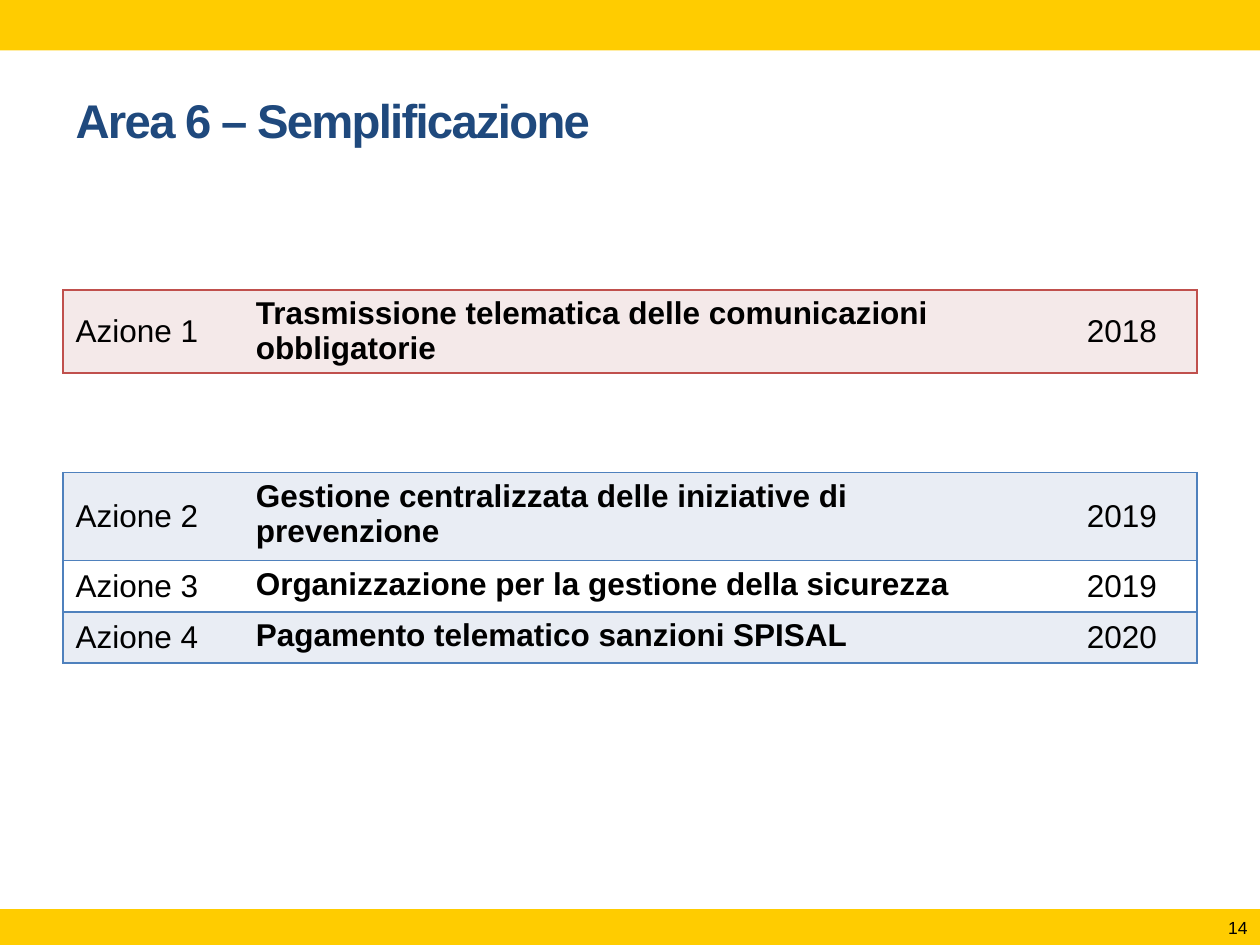
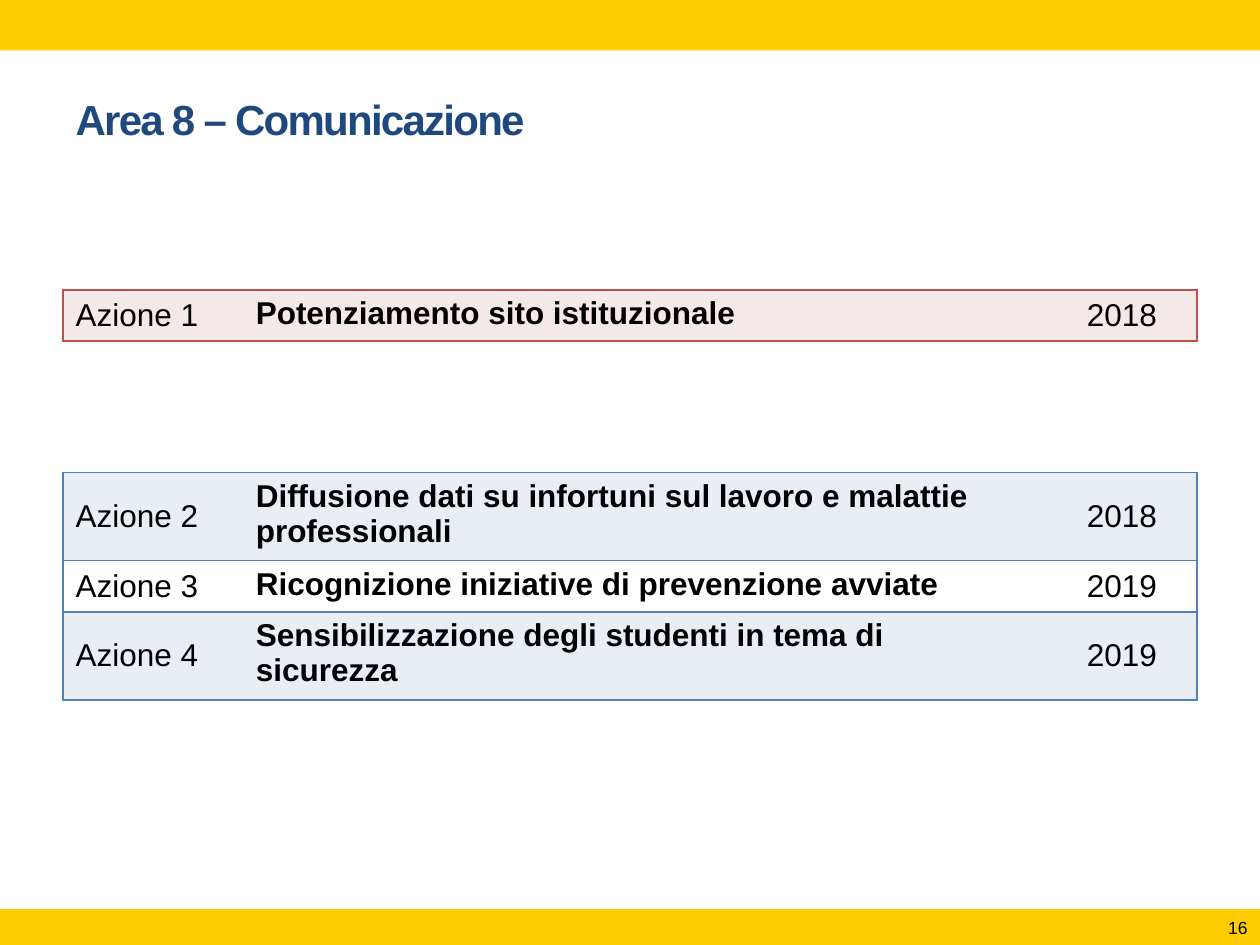
from dataclasses import dataclass

from lxml.etree import SubElement
from pptx import Presentation
from pptx.dml.color import RGBColor
from pptx.enum.shapes import MSO_SHAPE
from pptx.enum.text import MSO_ANCHOR, MSO_AUTO_SIZE, PP_ALIGN
from pptx.oxml.ns import qn
from pptx.util import Pt


@dataclass(frozen=True)
class Theme:
    font: str = "Arial"
    band: str = "FFCC00"
    title: str = "1F497D"
    text: str = "000000"
    white: str = "FFFFFF"
    red_line: str = "C0504D"
    red_fill: str = "F4E9E9"
    blue_line: str = "4F81BD"
    blue_fill: str = "E9EDF4"
    body_size: float = 18
    number_size: float = 10


THEME = Theme()
PAGE_WIDTH, PAGE_HEIGHT = 720, 540
LEFT, CONTENT_WIDTH = 36, 648
FOOTER_TOP, FOOTER_HEIGHT = 520.5, 19.5
COLUMN_WIDTHS = (103, 459.2, 85.8)
ROW_HEIGHTS = {1: 29.2, 2: 47.6}
FIRST_TABLE_TOP, SECOND_TABLE_TOP = 165.6, 270


def color(code):
    return RGBColor.from_string(code)


def add_span(para, text, size, ink=THEME.text, bold=False):
    span = para.add_run()
    span.text = text
    font = span.font
    font.name = THEME.font
    font.size = Pt(size)
    font.bold = bold
    font.color.rgb = color(ink)
    return span


def add_band(page, top, height, outlined=False):
    band = page.shapes.add_shape(
        MSO_SHAPE.RECTANGLE, 0, Pt(top), Pt(PAGE_WIDTH), Pt(height))
    band.shadow.inherit = False
    band.fill.solid()
    band.fill.fore_color.rgb = color(THEME.band)
    if outlined:
        band.line.color.rgb = color(THEME.band)
        band.line.width = Pt(2.08)
    else:
        band.line.fill.background()


def add_page_number(page, number):
    box = page.shapes.add_textbox(
        Pt(615), Pt(FOOTER_TOP), Pt(105), Pt(FOOTER_HEIGHT))
    box.text_frame.word_wrap = True
    para = box.text_frame.paragraphs[0]
    para.alignment = PP_ALIGN.RIGHT
    add_span(para, str(number), THEME.number_size)


def format_title(page, text, size):
    title = page.shapes.title
    title.left, title.top = Pt(LEFT), Pt(42)
    title.width, title.height = Pt(CONTENT_WIDTH), Pt(77.5)
    frame = title.text_frame
    frame.auto_size = MSO_AUTO_SIZE.NONE
    frame.word_wrap = True
    frame.vertical_anchor = MSO_ANCHOR.MIDDLE
    frame.margin_bottom = Pt(29)
    para = frame.paragraphs[0]
    para.alignment = PP_ALIGN.LEFT
    span = add_span(para, text, size, THEME.title, True)
    span.font._element.set("spc", "-100")


def set_borders(cell, edges, ink):
    properties = cell._tc.get_or_add_tcPr()
    for edge in "LRTB":
        line = SubElement(properties, qn(f"a:ln{edge}"), w=str(Pt(1)))
        if edge in edges:
            fill = SubElement(line, qn("a:solidFill"))
            SubElement(fill, qn("a:srgbClr"), val=ink)
        else:
            SubElement(line, qn("a:noFill"))


def add_action_table(page, top, first_action, actions, line, fill):
    heights = [ROW_HEIGHTS[line_count] for _, _, line_count in actions]
    table = page.shapes.add_table(
        len(actions), len(COLUMN_WIDTHS), Pt(LEFT), Pt(top),
        Pt(CONTENT_WIDTH), Pt(sum(heights))).table
    table.first_row = table.horz_banding = False
    for column, width in zip(table.columns, COLUMN_WIDTHS):
        column.width = Pt(width)
    for index, (description, year, _) in enumerate(actions):
        table.rows[index].height = Pt(heights[index])
        texts = (f"Azione {first_action + index}", description, year)
        for position, text in enumerate(texts):
            cell = table.cell(index, position)
            set_borders(cell, ("LTB", "TB", "RTB")[position], line)
            cell.fill.solid()
            cell.fill.fore_color.rgb = color(THEME.white if index % 2 else fill)
            is_description = position == 1
            cell.vertical_anchor = (
                MSO_ANCHOR.TOP if is_description else MSO_ANCHOR.MIDDLE)
            para = cell.text_frame.paragraphs[0]
            para.alignment = PP_ALIGN.CENTER if position == 2 else PP_ALIGN.LEFT
            add_span(para, text, THEME.body_size, bold=is_description)


def add_area_page(deck, title, title_size, number, first_actions, later_actions):
    page = deck.slides.add_slide(deck.slide_layouts[5])
    add_band(page, 0, 28.8)
    add_band(page, FOOTER_TOP, FOOTER_HEIGHT, outlined=True)
    format_title(page, title, title_size)
    add_action_table(page, FIRST_TABLE_TOP, 1, first_actions,
                     THEME.red_line, THEME.red_fill)
    add_page_number(page, number)
    add_action_table(page, SECOND_TABLE_TOP, 1 + len(first_actions), later_actions,
                     THEME.blue_line, THEME.blue_fill)


def main():
    deck = Presentation()
    deck.slide_width, deck.slide_height = Pt(PAGE_WIDTH), Pt(PAGE_HEIGHT)
    add_area_page(
        deck, "Area 6 – Semplificazione", 27, 14,
        [("Trasmissione telematica delle comunicazioni obbligatorie", "2018", 2)],
        [("Gestione centralizzata delle iniziative di prevenzione", "2019", 2),
         ("Organizzazione per la gestione della sicurezza", "2019", 1),
         ("Pagamento telematico sanzioni SPISAL", "2020", 1)])
    add_area_page(
        deck, "Area 8 – Comunicazione", 24, 16,
        [("Potenziamento sito istituzionale", "2018", 1)],
        [("Diffusione dati su infortuni sul lavoro e malattie professionali", "2018", 2),
         ("Ricognizione iniziative di prevenzione avviate", "2019", 1),
         ("Sensibilizzazione degli studenti in tema di sicurezza", "2019", 2)])
    deck.save("out.pptx")


if __name__ == "__main__":
    main()
